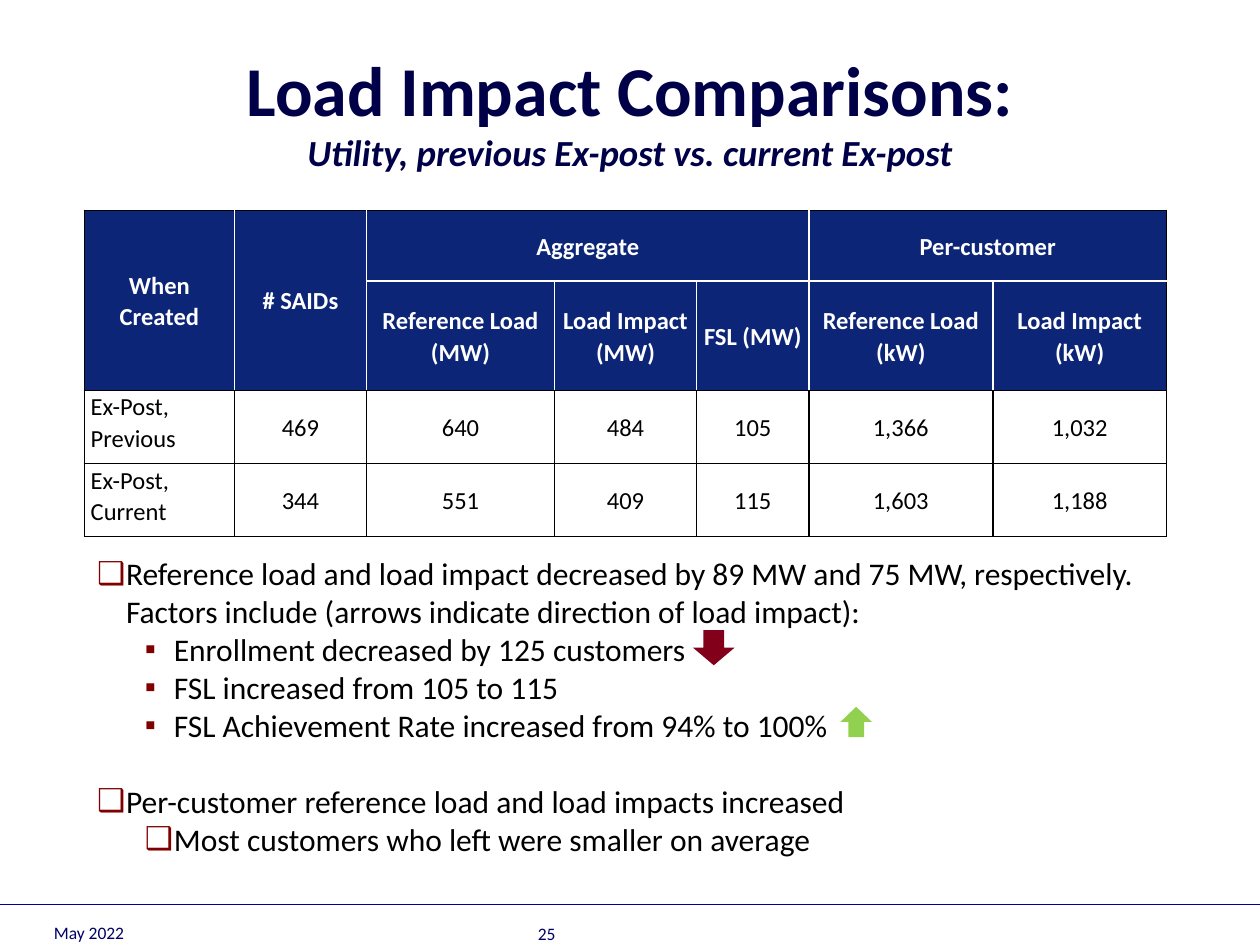
from lxml import etree
from pptx import Presentation
from pptx.dml.color import RGBColor
from pptx.enum.shapes import MSO_CONNECTOR, MSO_SHAPE
from pptx.enum.text import MSO_ANCHOR as Anchor, MSO_AUTO_SIZE as AutoSize, PP_ALIGN as Align
from pptx.oxml.ns import qn
from pptx.util import Inches, Pt

FONT = "Calibri"
COLORS = {
    "title": "000048", "footer": "000066", "rule": "000099", "header": "0C2577",
    "white": "FFFFFF", "black": "000000", "bullet": "800000",
    "down": "820019", "up": "92D050",
}
TITLE = "Load Impact Comparisons:\n"
SUBTITLE = "Utility, previous Ex-post vs. current Ex-post"

# Empty header cells are covered by the merged cells in MERGES.
TABLE_ROWS = [
    ["When Created", "# SAIDs", "Aggregate", "", "", "Per-customer", ""],
    ["", "", "Reference Load (MW)", "Load Impact (MW)", "FSL (MW)",
     "Reference Load (kW)", "Load Impact (kW)"],
    ["Ex-Post,\nPrevious", "469", "640", "484", "105", "1,366", "1,032"],
    ["Ex-Post, Current", "344", "551", "409", "115", "1,603", "1,188"],
]
HEADER_ROWS = 2
MERGES = [((0, 0), (1, 0)), ((0, 1), (1, 1)), ((0, 2), (0, 4)), ((0, 5), (0, 6))]
COLUMN_WIDTHS = [1.19, 1.05, 1.49, 1.13, 0.89, 1.46, 1.38]
ROW_HEIGHTS = [0.56, 0.87, 0.58, 0.58]

# Level, bullet, space before in points, text
BULLETS = [
    (0, "❑", 0, "Reference load and load impact decreased by 89 MW and 75 MW, respectively.\n"
                "Factors include (arrows indicate direction of load impact):"),
    (1, "▪", 0, "Enrollment decreased by 125 customers"),
    (1, "▪", 0, "FSL increased from 105 to 115"),
    (1, "▪", 0, "FSL Achievement Rate increased from 94% to 100%"),
    (0, "❑", 22, "Per-customer reference load and load impacts increased"),
    (1, "❑", 0, "Most customers who left were smaller on average"),
]
INDENTS = [0.23, 0.61]
HANGING = 0.23

# Left, top, width, height, rotation, colour
ARROWS = [(5.5, 5, 0.33, 0.28, 180, "down"), (6.67, 5.61, 0.25, 0.24, 0, "up")]
FOOTERS = [(0.33, 7.01, "May 2022"), (4.17, 7.02, "25")]


def rgb(name):
    return RGBColor.from_string(COLORS[name])


def write(para, text, size, color="black", bold=False, italic=False, align=Align.LEFT,
          spacing=1.0, before=0):
    """Add text to a paragraph, turning each newline into a line break."""
    para.alignment, para.line_spacing, para.space_before = align, spacing, Pt(before)
    for index, line in enumerate(text.split("\n")):
        if index:
            para.add_line_break()
        if line:
            span = para.add_run()
            span.text = line
            font = span.font
            font.name, font.size, font.bold, font.italic = FONT, Pt(size), bold, italic
            font.color.rgb = rgb(color)


def place(shape, left, top, width, height):
    shape.left, shape.top = Inches(left), Inches(top)
    shape.width, shape.height = Inches(width), Inches(height)


def set_borders(cell, sides):
    properties = cell._tc.get_or_add_tcPr()
    for position, (tag, color) in enumerate(sides.items()):
        line = etree.Element(qn(f"a:{tag}"), w=str(Pt(1)))
        fill = etree.SubElement(line, qn("a:solidFill"))
        etree.SubElement(fill, qn("a:srgbClr"), val=COLORS[color])
        properties.insert(position, line)


def set_bullet(para, character, level):
    para.level = level
    properties = para._p.get_or_add_pPr()
    properties.set("marL", str(Inches(INDENTS[level])))
    properties.set("indent", str(Inches(-HANGING)))
    color = etree.SubElement(properties, qn("a:buClr"))
    etree.SubElement(color, qn("a:srgbClr"), val=COLORS["bullet"])
    etree.SubElement(properties, qn("a:buChar"), char=character)


def add_title(slide):
    title = slide.shapes.title
    place(title, 0.5, 0.25, 9, 1.25)
    frame = title.text_frame
    frame.vertical_anchor, frame.auto_size = Anchor.MIDDLE, AutoSize.NONE
    para = frame.paragraphs[0]
    write(para, TITLE, 40, "title", bold=True, align=Align.CENTER)
    write(para, SUBTITLE, 21, "title", bold=True, italic=True, align=Align.CENTER)


def format_cell(cell, row, column, text):
    header = row < HEADER_ROWS
    last_row = row + cell.span_height == HEADER_ROWS
    last_column = column + cell.span_width == len(COLUMN_WIDTHS)
    inner = "white" if header else "black"
    set_borders(cell, {
        "lnL": inner if column else "black",
        "lnR": "black" if last_column else inner,
        "lnT": inner if row else "black",
        "lnB": "black" if last_row else inner,
    })
    if header:
        cell.fill.solid()
        cell.fill.fore_color.rgb = rgb("header")
    else:
        cell.fill.background()
    label = not header and column == 0
    cell.margin_left = cell.margin_right = Inches(0.05)
    cell.margin_top = cell.margin_bottom = 0
    cell.vertical_anchor = Anchor.TOP if label else Anchor.MIDDLE
    write(cell.text_frame.paragraphs[0], text, 14, inner, bold=header, spacing=1.07,
          align=Align.LEFT if label else Align.CENTER)


def add_comparison_table(slide):
    table = slide.shapes.add_table(
        len(ROW_HEIGHTS), len(COLUMN_WIDTHS), Inches(0.67), Inches(1.67),
        Inches(sum(COLUMN_WIDTHS)), Inches(sum(ROW_HEIGHTS))).table
    for column, width in zip(table.columns, COLUMN_WIDTHS):
        column.width = Inches(width)
    for row, height in zip(table.rows, ROW_HEIGHTS):
        row.height = Inches(height)
    for first, last in MERGES:
        table.cell(*first).merge(table.cell(*last))
    for row, texts in enumerate(TABLE_ROWS):
        for column, text in enumerate(texts):
            cell = table.cell(row, column)
            if not cell.is_spanned:
                format_cell(cell, row, column, text)


def add_findings(slide):
    body = slide.placeholders[1]
    place(body, 0.67, 4.35, 8.5, 2.52)
    frame = body.text_frame
    frame.auto_size = AutoSize.NONE
    for index, (level, character, before, text) in enumerate(BULLETS):
        para = frame.add_paragraph() if index else frame.paragraphs[0]
        set_bullet(para, character, level)
        write(para, text, 18, before=before)


def add_arrows(slide):
    for left, top, width, height, rotation, color in ARROWS:
        arrow = slide.shapes.add_shape(MSO_SHAPE.UP_ARROW, Inches(left), Inches(top),
                                       Inches(width), Inches(height))
        arrow.rotation = rotation
        arrow.shadow.inherit = False
        arrow.fill.solid()
        arrow.fill.fore_color.rgb = rgb(color)
        arrow.line.fill.background()


def add_footer(slide):
    rule = slide.shapes.add_connector(MSO_CONNECTOR.STRAIGHT, 0, Inches(7.18),
                                      Inches(10), Inches(7.18))
    rule.line.color.rgb, rule.line.width = rgb("rule"), Pt(0.75)
    etree.SubElement(rule._element.spPr, qn("a:effectLst"))
    for left, top, text in FOOTERS:
        box = slide.shapes.add_textbox(Inches(left), Inches(top), Inches(2.33), Inches(0.52))
        box.text_frame.word_wrap = True
        box.text_frame.vertical_anchor = Anchor.BOTTOM
        write(box.text_frame.paragraphs[0], text, 10, "footer")


def main():
    deck = Presentation()
    deck.slide_width, deck.slide_height = Inches(10), Inches(7.5)
    slide = deck.slides.add_slide(deck.slide_layouts[1])
    add_footer(slide)
    add_title(slide)
    add_comparison_table(slide)
    add_findings(slide)
    add_arrows(slide)
    deck.save("out.pptx")


if __name__ == "__main__":
    main()
